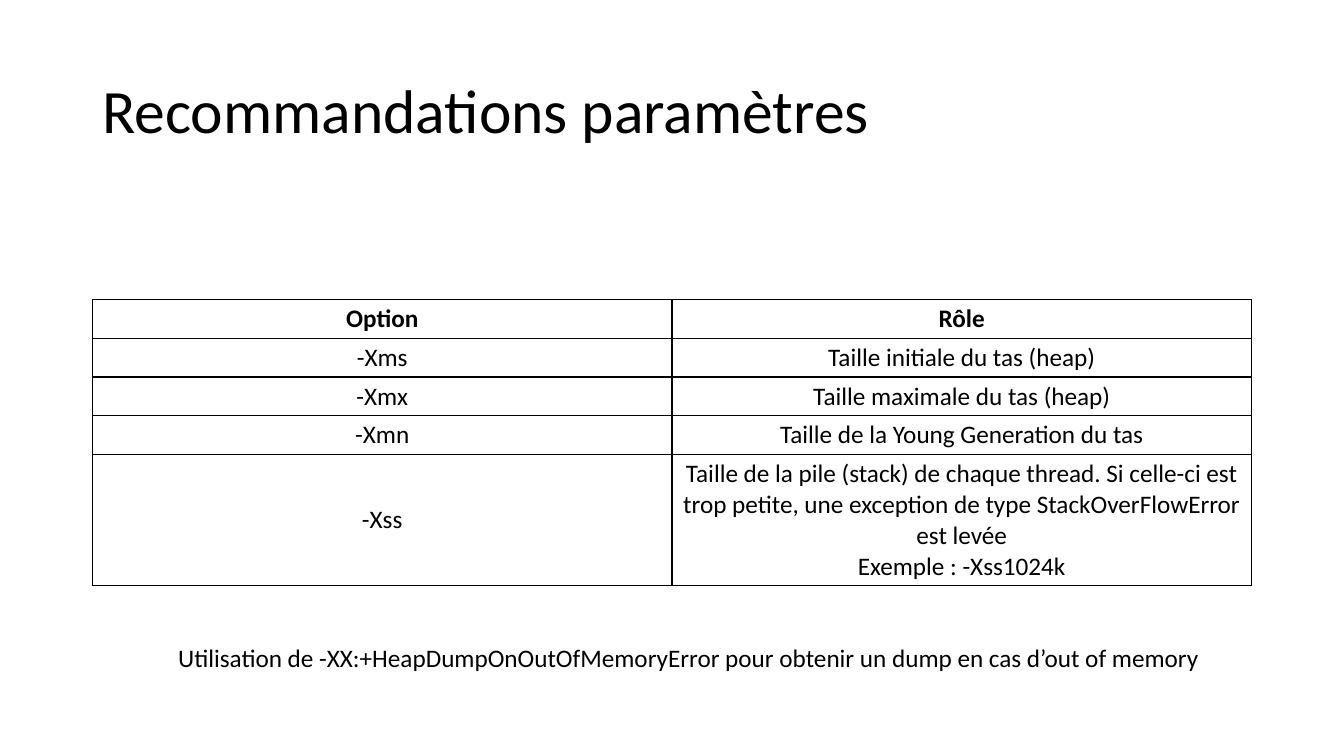
from dataclasses import dataclass

from lxml import etree
from pptx import Presentation
from pptx.dml.color import RGBColor
from pptx.enum.text import MSO_ANCHOR, MSO_AUTO_SIZE, PP_ALIGN
from pptx.oxml.ns import qn
from pptx.util import Cm, Pt

LEFT, CENTER = PP_ALIGN.LEFT, PP_ALIGN.CENTER
TOP, MIDDLE = MSO_ANCHOR.TOP, MSO_ANCHOR.MIDDLE
FIXED, GROW = MSO_AUTO_SIZE.NONE, MSO_AUTO_SIZE.SHAPE_TO_FIT_TEXT


@dataclass(frozen=True)
class Theme:
    font: str = "Calibri"
    ink: str = "000000"
    title: int = 44
    body: int = 18
    border: int = 1


THEME = Theme()
OPTIONS = [
    ("Option", "Rôle"),
    ("-Xms", "Taille initiale du tas (heap)"),
    ("-Xmx", "Taille maximale du tas (heap)"),
    ("-Xmn", "Taille de la Young Generation du tas"),
    ("-Xss", "Taille de la pile (stack) de chaque thread. Si celle-ci est trop petite, "
             "une exception de type StackOverFlowError est levée\nExemple : -Xss1024k"),
]


def write(tf, text, size=THEME.body, bold=False, align=LEFT, spacing=None):
    for i, line in enumerate(text.split("\n")):
        p = tf.add_paragraph() if i else tf.paragraphs[0]
        p.alignment = align
        p.line_spacing = spacing
        r = p.add_run()
        r.text = line
        r.font.name = THEME.font
        r.font.size = Pt(size)
        r.font.bold = bold
        r.font.color.rgb = RGBColor.from_string(THEME.ink)


def add_text(s, text, left, top, width, height, anchor=TOP, wrap=True, fit=FIXED, **fmt):
    tf = s.shapes.add_textbox(Cm(left), Cm(top), Cm(width), Cm(height)).text_frame
    tf.word_wrap = wrap
    tf.auto_size = fit
    tf.vertical_anchor = anchor
    write(tf, text, **fmt)


def set_borders(cell):
    tcPr = cell._tc.get_or_add_tcPr()
    for side in ("lnL", "lnR", "lnT", "lnB"):
        ln = etree.SubElement(tcPr, qn(f"a:{side}"), w=str(Pt(THEME.border)))
        fill = etree.SubElement(ln, qn("a:solidFill"))
        etree.SubElement(fill, qn("a:srgbClr"), val=THEME.ink)


def add_grid(s, rows, left, top, width, heights):
    frame = s.shapes.add_table(len(rows), len(rows[0]), Cm(left), Cm(top),
                               Cm(width), Cm(sum(heights)))
    table = frame.table
    table.first_row = table.horz_banding = False
    for i, (row, height) in enumerate(zip(rows, heights)):
        table.rows[i].height = Cm(height)
        for j, text in enumerate(row):
            cell = table.cell(i, j)
            cell.margin_left = cell.margin_right = Cm(0.1)
            cell.margin_top = cell.margin_bottom = Cm(0.1)
            cell.vertical_anchor = MIDDLE
            set_borders(cell)
            cell.fill.background()
            write(cell.text_frame, text, bold=i == 0, align=CENTER)


def main():
    prs = Presentation()
    prs.slide_width, prs.slide_height = Cm(33.87), Cm(19.05)
    s = prs.slides.add_slide(prs.slide_layouts[6])
    add_text(s, "Recommandations paramètres", 2.33, 1.01, 29.21, 3.68,
             anchor=MIDDLE, size=THEME.title, spacing=0.9)
    add_grid(s, OPTIONS, 2.33, 7.54, 29.21, [0.98] * 4 + [3.3])
    add_text(s, "Utilisation de -XX:+HeapDumpOnOutOfMemoryError pour obtenir un dump "
                "en cas d’out of memory", 4.24, 16.05, 26.57, 1.02, wrap=False, fit=GROW)
    prs.save("out.pptx")


if __name__ == "__main__":
    main()
